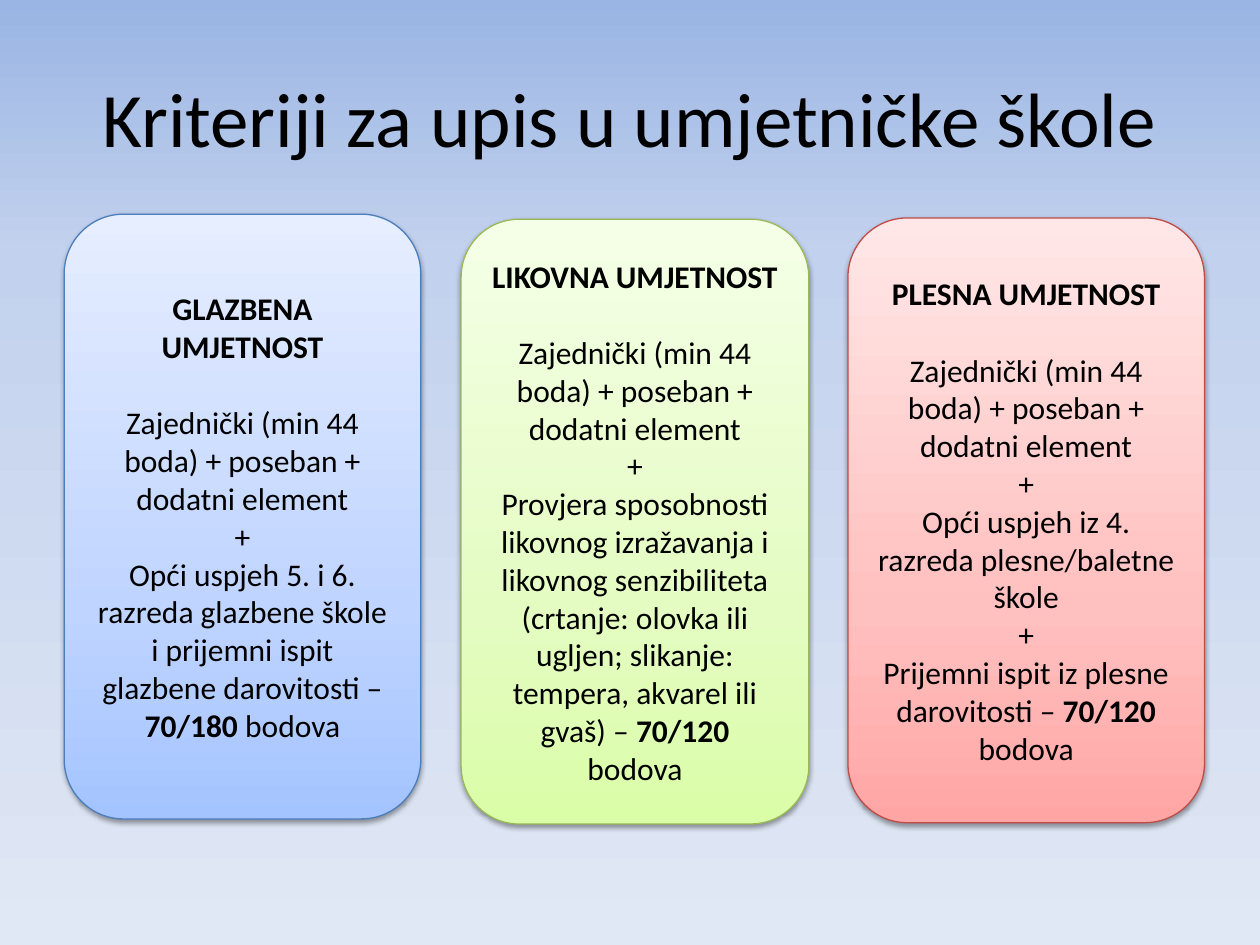
import copy

from lxml import etree
from pptx import Presentation
from pptx import util as u
from pptx.dml.color import RGBColor
from pptx.enum import shapes, text
from pptx.oxml.ns import qn

PX = 9144  # EMU per px, 100 px to the inch
FONT = "Calibri"
BLACK = RGBColor(0, 0, 0)

# Gradient stops: position in percent, colour
SKY = [(0, RGBColor(0x9A, 0xB5, 0xE4)), (27, RGBColor(0xC2, 0xD1, 0xED)),
       (100, RGBColor(0xE1, 0xE8, 0xF5))]
BLUE = [(0, RGBColor(0xA4, 0xC4, 0xFF)), (35, RGBColor(0xBF, 0xD4, 0xFF)),
        (100, RGBColor(0xE6, 0xEE, 0xFF))]
GREEN = [(0, RGBColor(0xDA, 0xFD, 0xA7)), (35, RGBColor(0xE4, 0xFC, 0xC2)),
         (100, RGBColor(0xF5, 0xFF, 0xE7))]
RED = [(0, RGBColor(0xFF, 0xA6, 0xA5)), (35, RGBColor(0xFF, 0xC0, 0xBF)),
       (100, RGBColor(0xFF, 0xE7, 0xE7))]
BLUE_LINE = RGBColor(0x4B, 0x7E, 0xBC)
GREEN_LINE = RGBColor(0x98, 0xB9, 0x55)
RED_LINE = RGBColor(0xBF, 0x4C, 0x48)


class SlideBuilder:
    """Holds the style and the current slide."""

    def __init__(self, presentation):
        self.slide = presentation.slides.add_slide(presentation.slide_layouts[5])

    def gradient(self, fill, element, stops, angle):
        fill.gradient()
        fill.gradient_angle = angle
        stop_list = next(element.iter(qn("a:gsLst")))
        stop_list.append(copy.deepcopy(stop_list[-1]))
        for stop, (position, colour) in zip(fill.gradient_stops, stops):
            stop.position = position / 100
            stop.color.rgb = colour

    def background(self, stops):
        self.gradient(self.slide.background.fill, self.slide.element, stops, 270)

    def runs(self, paragraph, parts, size):
        """Add (wording, bold) parts to a centred paragraph."""
        paragraph.alignment = text.PP_ALIGN.CENTER
        for wording, bold in parts:
            run = paragraph.add_run()
            run.text = wording
            run.font.name = FONT
            run.font.size = u.Pt(size)
            run.font.bold = bold
            run.font.color.rgb = BLACK

    def title(self, wording, *box):
        title = self.slide.shapes.title
        title.left, title.top, title.width, title.height = (n * PX for n in box)
        title.text_frame.vertical_anchor = text.MSO_ANCHOR.MIDDLE
        self.runs(title.text_frame.paragraphs[0], [(wording, False)], 44)

    def soft_shadow(self, shape):
        shape.shadow.inherit = False
        effects = shape.element.spPr.find(qn("a:effectLst"))
        shadow = etree.SubElement(effects, qn("a:outerShdw"), blurRad="40000",
                                  dist="20000", dir="5400000", rotWithShape="0")
        colour = etree.SubElement(shadow, qn("a:srgbClr"), val=str(BLACK))
        etree.SubElement(colour, qn("a:alpha"), val="38000")

    def card(self, box, stops, line, heading, paragraphs):
        shape = self.slide.shapes.add_shape(
            shapes.MSO_SHAPE.ROUNDED_RECTANGLE, *(n * PX for n in box))
        self.gradient(shape.fill, shape.element, stops, 90)
        shape.line.color.rgb = line
        shape.line.width = u.Pt(0.75)
        self.soft_shadow(shape)

        frame = shape.text_frame
        frame.word_wrap = True
        frame.vertical_anchor = text.MSO_ANCHOR.MIDDLE
        self.runs(frame.paragraphs[0], [(heading, True)], 18)
        frame.paragraphs[0].space_after = u.Pt(22)  # one line of 18 pt
        for parts in paragraphs:
            self.runs(frame.add_paragraph(), parts, 18)


def main():
    presentation = Presentation()
    presentation.slide_width = 1000 * PX
    presentation.slide_height = 750 * PX

    builder = SlideBuilder(presentation)
    builder.background(SKY)
    builder.title("Kriteriji za upis u umjetničke škole", 50, 30, 900, 125)

    # Lines shared by the three cards
    plus = [("+", False)]
    common = [[("Zajednički (min 44 boda) + poseban + dodatni element", False)], plus]

    # Music
    builder.card((51, 170, 283, 480), BLUE, BLUE_LINE, "GLAZBENA UMJETNOST", common + [
        [("Opći uspjeh 5. i 6. razreda glazbene škole i prijemni ispit "
          "glazbene darovitosti – ", False), ("70/180", True), (" bodova", False)],
    ])
    # Visual art
    builder.card((366, 174, 276, 480), GREEN, GREEN_LINE, "LIKOVNA UMJETNOST", common + [
        [("Provjera sposobnosti likovnog izražavanja i likovnog senzibiliteta "
          "(crtanje: olovka ili ugljen; slikanje: tempera, akvarel ili gvaš) – ", False),
         ("70/120 ", True), ("bodova", False)],
    ])
    # Dance
    builder.card((673, 173, 283, 480), RED, RED_LINE, "PLESNA UMJETNOST", common + [
        [("Opći uspjeh iz 4. razreda plesne/baletne škole", False)],
        plus,
        [("Prijemni ispit iz plesne darovitosti – ", False),
         ("70/120", True), (" bodova", False)],
    ])

    presentation.save("out.pptx")


if __name__ == "__main__":
    main()
